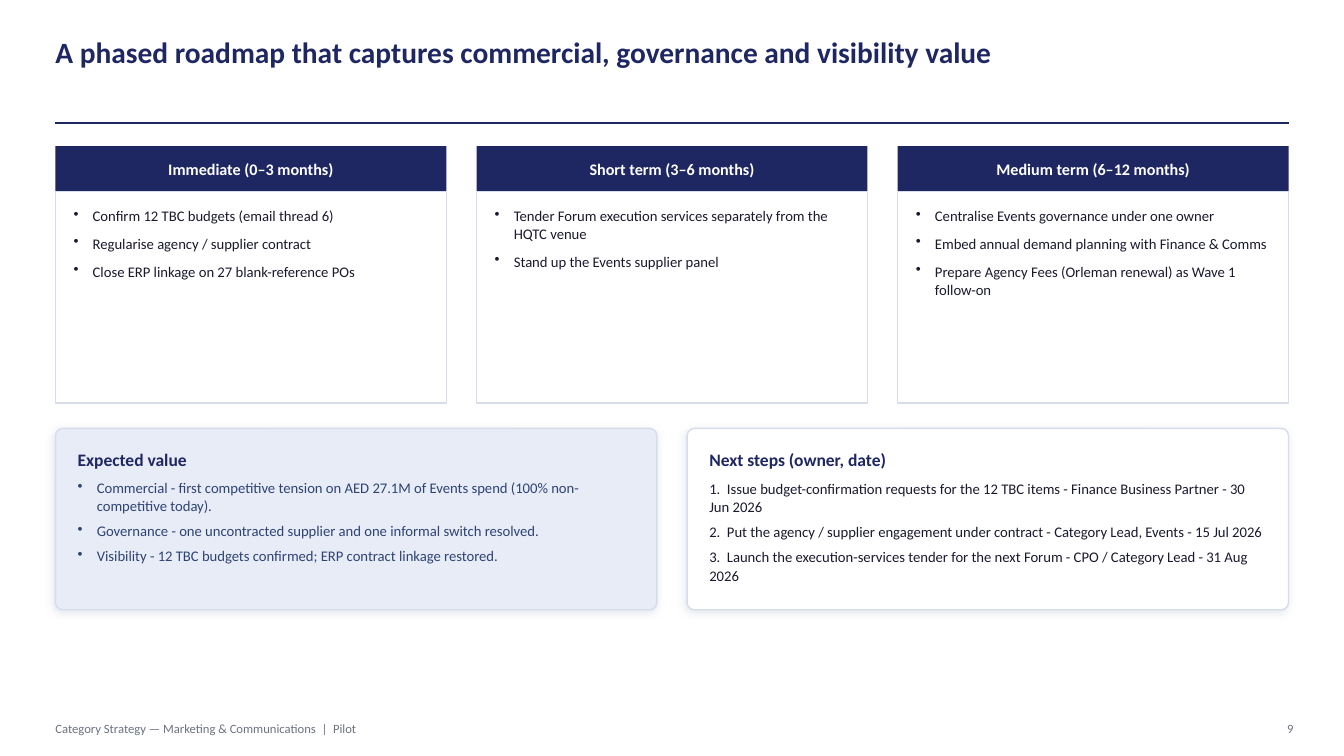
from lxml import etree
from pptx import Presentation
from pptx import util as u
from pptx.dml.color import RGBColor
from pptx.enum import shapes, text
from pptx.oxml import parse_xml
from pptx.oxml.ns import qn

WIDTH, HEIGHT = 13.33, 7.5
MARGIN, GAP = 0.55, 0.3
CONTENT = WIDTH - 2 * MARGIN
FONT = "Calibri"
COLOURS = {
    "navy": "1E2761", "white": "FFFFFF", "border": "D6DCEA", "ink": "1A1A2E",
    "tint": "E8ECF6", "slate": "2E4374", "grey": "6B7280", "shadow": "9AA6C0",
}
DRAWING = "http://schemas.openxmlformats.org/drawingml/2006/main"

PHASES = [
    ("Immediate (0–3 months)", [
        "Confirm 12 TBC budgets (email thread 6)",
        "Regularise agency / supplier contract",
        "Close ERP linkage on 27 blank-reference POs",
    ]),
    ("Short term (3–6 months)", [
        "Tender Forum execution services separately from the HQTC venue",
        "Stand up the Events supplier panel",
    ]),
    ("Medium term (6–12 months)", [
        "Centralise Events governance under one owner",
        "Embed annual demand planning with Finance & Comms",
        "Prepare Agency Fees (Orleman renewal) as Wave 1 follow-on",
    ]),
]
VALUES = [
    "Commercial - first competitive tension on AED 27.1M of Events spend "
    "(100% non-competitive today).",
    "Governance - one uncontracted supplier and one informal switch resolved.",
    "Visibility - 12 TBC budgets confirmed; ERP contract linkage restored.",
]
STEPS = [
    "1.  Issue budget-confirmation requests for the 12 TBC items - "
    "Finance Business Partner - 30 Jun 2026",
    "2.  Put the agency / supplier engagement under contract - "
    "Category Lead, Events - 15 Jul 2026",
    "3.  Launch the execution-services tender for the next Forum - "
    "CPO / Category Lead - 31 Aug 2026",
]


def colour(name):
    return RGBColor.from_string(COLOURS[name])


def inches(*lengths):
    return [u.Inches(length) for length in lengths]


def columns(count):
    """Yield the left edge and width of equal columns across the content."""
    width = (CONTENT - GAP * (count - 1)) / count
    for index in range(count):
        yield MARGIN + index * (width + GAP), width


def add_span(para, words, size, tone, bold=False):
    span = para.add_run()
    span.text = words
    span.font.name = FONT
    span.font.size = u.Pt(size)
    span.font.bold = bold
    span.font.color.rgb = colour(tone)


def set_frame(frame, anchor):
    frame.word_wrap = True
    frame.auto_size = text.MSO_AUTO_SIZE.NONE
    frame.vertical_anchor = anchor
    frame.margin_left = frame.margin_right = 0
    frame.margin_top = frame.margin_bottom = 0


def add_label(page, box, words, size, tone, bold=False, align=text.PP_ALIGN.LEFT):
    frame = page.shapes.add_textbox(*inches(*box)).text_frame
    set_frame(frame, text.MSO_ANCHOR.MIDDLE)
    para = frame.paragraphs[0]
    para.alignment = align
    add_span(para, words, size, tone, bold)


def add_list(page, box, items, tone, after, spacing=1.02, bullets=True):
    frame = page.shapes.add_textbox(*inches(*box)).text_frame
    set_frame(frame, text.MSO_ANCHOR.TOP)
    for index, item in enumerate(items):
        para = frame.add_paragraph() if index else frame.paragraphs[0]
        if bullets:
            properties = para._p.get_or_add_pPr()
            properties.set("marL", str(u.Inches(0.19)))
            properties.set("indent", str(-u.Inches(0.19)))
            etree.SubElement(properties, qn("a:buChar")).set("char", "•")
        para.line_spacing = spacing
        para.space_after = u.Pt(after)
        add_span(para, item, 10.5, tone)


def add_panel(page, box, fill, border=None, kind=shapes.MSO_SHAPE.RECTANGLE):
    panel = page.shapes.add_shape(kind, *inches(*box))
    panel.shadow.inherit = False
    panel.fill.solid()
    panel.fill.fore_color.rgb = colour(fill)
    if border:
        panel.line.color.rgb = colour(border)
        panel.line.width = u.Pt(1)
    else:
        panel.line.fill.background()
    return panel


def add_soft_shadow(panel):
    effects = panel._element.spPr.find(qn("a:effectLst"))
    effects.append(parse_xml(
        f'<a:outerShdw xmlns:a="{DRAWING}" blurRad="{u.Pt(6)}" dist="{u.Pt(2)}" '
        f'dir="{135 * 60000}" algn="bl" rotWithShape="0">'
        f'<a:srgbClr val="{COLOURS["shadow"]}"><a:alpha val="28000"/></a:srgbClr>'
        '</a:outerShdw>'))


def add_heading(page, box):
    left, top, width, height = box
    title = page.shapes.title
    title.left, title.top, title.width, title.height = inches(left, top, width, 0.82)
    set_frame(title.text_frame, text.MSO_ANCHOR.TOP)
    para = title.text_frame.paragraphs[0]
    para.alignment = text.PP_ALIGN.LEFT
    add_span(para, "A phased roadmap that captures commercial, governance "
             "and visibility value", 21, "navy", True)
    bottom = top + height
    rule = page.shapes.add_connector(
        shapes.MSO_CONNECTOR.STRAIGHT, *inches(left, bottom, left + width, bottom))
    rule.line.color.rgb = colour("navy")
    rule.line.width = u.Pt(1.25)
    etree.SubElement(rule._element.spPr, qn("a:effectLst"))


def add_phase(page, box, name, actions):
    left, top, width, height = box
    band = 0.45
    add_panel(page, (left, top, width, band), "navy")
    add_label(page, (left + 0.1, top, width - 0.2, band), name, 11.5, "white",
              True, text.PP_ALIGN.CENTER)
    add_panel(page, (left, top + band, width, height - band), "white", "border")
    add_list(page, (left + 0.18, top + band + 0.15, width - 0.36,
                    height - band - 0.25), actions, "ink", 7)


def add_card(page, box, fill, name, items, tone, **style):
    left, top, width, height = box
    card = add_panel(page, box, fill, "border", shapes.MSO_SHAPE.ROUNDED_RECTANGLE)
    card.adjustments[0] = 0.04
    add_soft_shadow(card)
    inner_left, inner_width = left + 0.22, width - 0.44
    add_label(page, (inner_left, top + 0.15, inner_width, 0.32), name, 12.5,
              "navy", True)
    add_list(page, (inner_left, top + 0.5, inner_width, height - 0.8), items,
             tone, 5, **style)


def add_footer(page, top, height):
    add_label(page, (MARGIN, top, 9, height),
              "Category Strategy — Marketing & Communications  |  Pilot", 9, "grey")
    add_label(page, (WIDTH - 1, top, 0.5, height), "9", 9, "grey",
              align=text.PP_ALIGN.RIGHT)


def add_roadmap(deck):
    page = deck.slides.add_slide(deck.slide_layouts[5])
    page.background.fill.solid()
    page.background.fill.fore_color.rgb = colour("white")
    add_heading(page, (MARGIN, 0.34, CONTENT, 0.88))
    for (left, width), (name, actions) in zip(columns(3), PHASES):
        add_phase(page, (left, 1.45, width, 2.55), name, actions)
    value_box, steps_box = [(left, 4.25, width, 1.8) for left, width in columns(2)]
    add_card(page, value_box, "tint", "Expected value", VALUES, "slate")
    add_card(page, steps_box, "white", "Next steps (owner, date)", STEPS, "ink",
             spacing=1.04, bullets=False)
    add_footer(page, 7.08, 0.3)


def main():
    deck = Presentation()
    deck.slide_width, deck.slide_height = inches(WIDTH, HEIGHT)
    add_roadmap(deck)
    deck.save("out.pptx")


if __name__ == "__main__":
    main()
